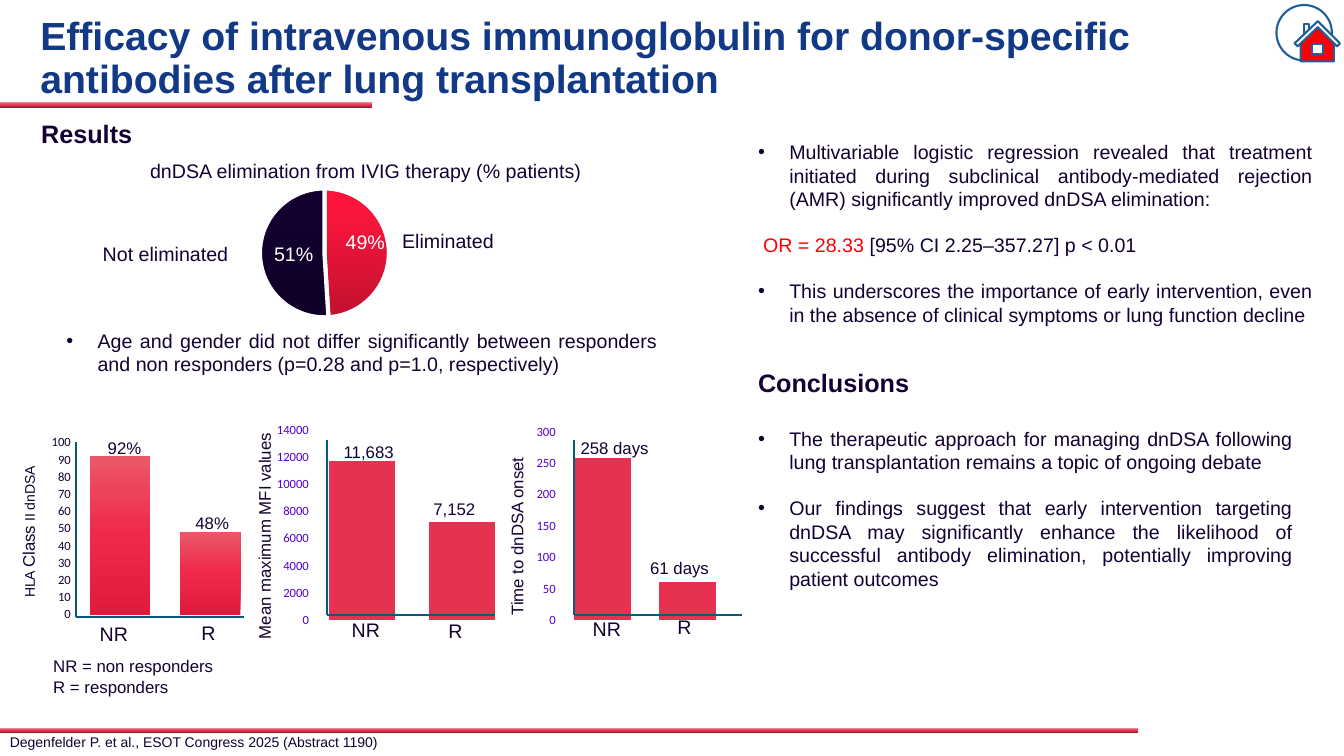
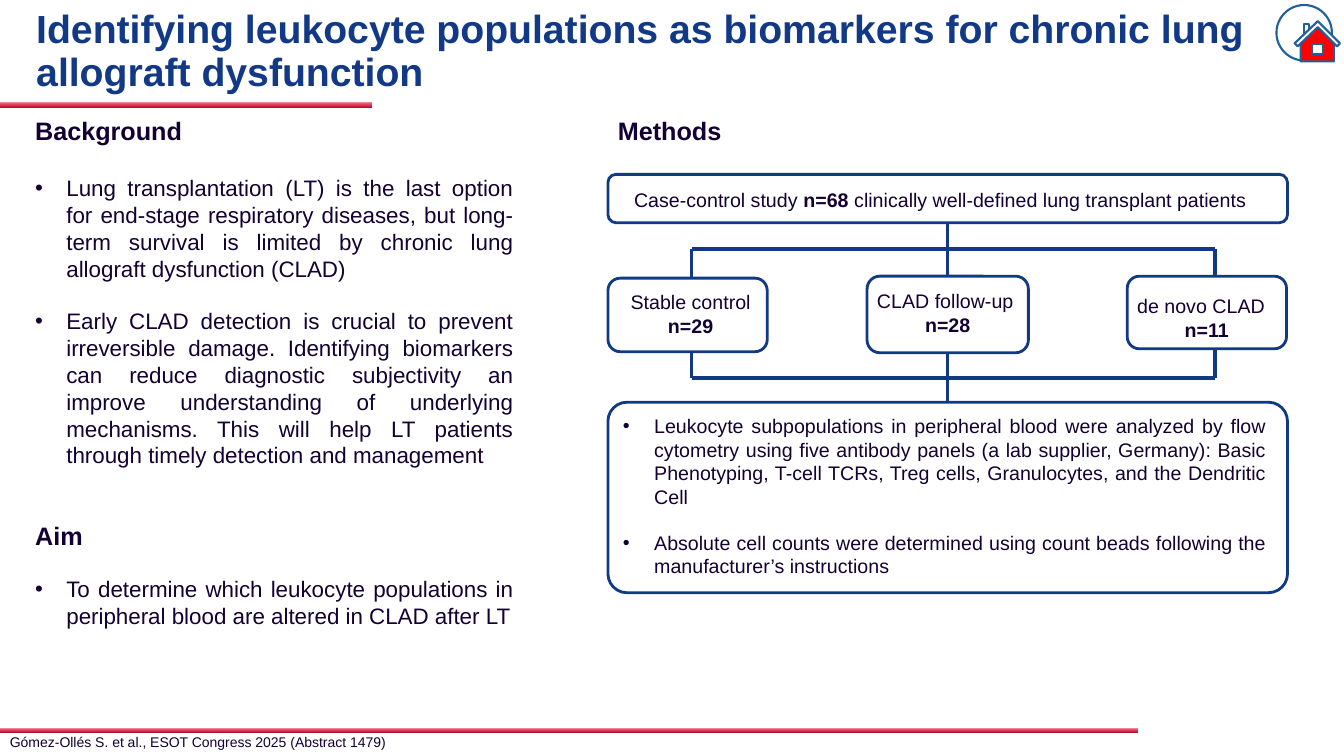
import pptx
import pptx.chart.data
import pptx.dml.color
import pptx.enum.chart
import pptx.enum.shapes
import pptx.enum.text
import pptx.oxml
import pptx.oxml.ns
import pptx.util
from lxml import etree

PX = 9144
INK, NAVY, FRAME, AXIS, ICON = "140032", "123986", "113986", "09597D", "215F9A"
WHITE, RED, CRIMSON, VIOLET = "FFFFFF", "FF0000", "E63250", "5400D3"
BAND = [(0, "A7142D"), (48, "E73855"), (100, "F08496")]
COLUMN = [(0, "DF1A3B"), (50, "EF294A"), (100, "EB5769")]
ELIMINATED = [(0, "C0112E"), (80, "F9163C"), (100, "FF1239")]
REMAINING = [(0, "0F0025"), (80, "130030"), (100, "130031")]
rgb = pptx.dml.color.RGBColor.from_string
qn = pptx.oxml.ns.qn
ALIGN = pptx.enum.text.PP_ALIGN
SHAPE = pptx.enum.shapes.MSO_SHAPE
CHART = pptx.enum.chart.XL_CHART_TYPE


def finish(target, fill=None, line=None, width=1.5):
    if isinstance(fill, list):
        target.fill.gradient()
        target.fill.gradient_angle = 90
        stops = target.fill._xPr.find(".//" + qn("a:gsLst"))
        for stop in list(stops):
            stops.remove(stop)
        for position, color in fill:
            stop = etree.SubElement(stops, qn("a:gs"), pos=str(position * 1000))
            etree.SubElement(stop, qn("a:srgbClr"), val=color)
    elif fill:
        target.fill.solid()
        target.fill.fore_color.rgb = rgb(fill)
    else:
        target.fill.background()
    if line:
        target.line.color.rgb = rgb(line)
        target.line.width = pptx.util.Pt(width)
    else:
        target.line.fill.background()
    if hasattr(target, "shadow"):
        target.shadow.inherit = False


def write(slide, box, paragraphs, size=14, color=INK, bold=False, align=ALIGN.LEFT, rotation=0):
    area = slide.shapes.add_textbox(*[length * PX for length in box])
    area.rotation = rotation
    frame = area.text_frame
    frame.word_wrap = True
    for index, content in enumerate(paragraphs):
        if isinstance(content, str):
            content = {"runs": [(content, {})]}
        paragraph = frame.paragraphs[0] if index == 0 else frame.add_paragraph()
        paragraph.alignment = content.get("align", align)
        properties = paragraph._p.get_or_add_pPr()
        if content.get("bullet"):
            properties.set("marL", str(31 * PX))
            properties.set("indent", str(-31 * PX))
            etree.SubElement(properties, qn("a:buFont"), typeface="Arial")
            etree.SubElement(properties, qn("a:buChar"), char="•")
            paragraph.alignment = ALIGN.JUSTIFY
        elif "left" in content:
            properties.set("marL", str(content["left"] * PX))
        if "before" in content:
            paragraph.space_before = pptx.util.Pt(content["before"])
        for wording, style in content["runs"]:
            run = paragraph.add_run()
            run.text = wording
            run.font.name = "Arial"
            run.font.size = pptx.util.Pt(style.get("size", size))
            run.font.bold = style.get("bold", bold)
            run.font.color.rgb = rgb(style.get("color", color))
    return area


deck = pptx.Presentation()
deck.slide_width = 1333 * PX
deck.slide_height = 750 * PX
pages = []
for title, title_box, citation in [
    ("Efficacy of intravenous immunoglobulin for donor-specific antibodies after lung transplantation",
     (40, 37, 1213, 44), "Degenfelder P. et al., ESOT Congress 2025 (Abstract 1190)"),
    ("Identifying leukocyte populations as biomarkers for chronic lung allograft dysfunction",
     (36, 30, 1200, 44), "Gómez-Ollés S. et al., ESOT Congress 2025 (Abstract 1479)"),
]:
    page = deck.slides.add_slide(deck.slide_layouts[6])
    pages.append(page)
    heading = write(page, title_box, [title], size=28, color=NAVY, bold=True).text_frame
    heading.margin_left = heading.margin_right = heading.margin_top = heading.margin_bottom = 0
    heading.vertical_anchor = pptx.enum.text.MSO_ANCHOR.MIDDLE
    heading.paragraphs[0].line_spacing = 0.9
    for band in [(0, 101, 369, 6), (0, 722, 1129, 5)]:
        finish(page.shapes.add_shape(SHAPE.RECTANGLE, *[length * PX for length in band]), BAND)
    write(page, (0, 723, 667, 27), [citation], size=10)
    house = [(1307, 25), (1323, 39), (1323, 61), (1290, 61), (1290, 39)]
    roof = [(1307, 21), (1329, 43), (1326, 46), (1307, 27), (1287, 46), (1284, 43)]
    for part, fill in [
        ((1266, 5, 55, 55), None), ((1293, 24, 5, 14), WHITE), (house, RED),
        ((1301, 44, 11, 10), WHITE), (roof, WHITE),
    ]:
        if isinstance(part, list):
            outline = page.shapes.build_freeform(*part[0], scale=PX)
            outline.add_line_segments(part[1:], close=True)
            piece = outline.convert_to_shape()
        else:
            preset = SHAPE.RECTANGLE if fill else SHAPE.OVAL
            piece = page.shapes.add_shape(preset, *[length * PX for length in part])
        finish(piece, fill, ICON)
results, methods = pages

write(results, (31, 112, 561, 40), ["Results"], size=18, bold=True)
write(results, (742, 359, 550, 236), [
    {"runs": [("Conclusions", {"size": 18, "bold": True})]},
    {"bullet": True, "before": 21, "runs": [("The therapeutic approach for managing dnDSA following lung transplantation remains a topic of ongoing debate", {})]},
    {"bullet": True, "before": 16, "runs": [("Our findings suggest that early intervention targeting dnDSA may significantly enhance the likelihood of successful antibody elimination, potentially improving patient outcomes", {})]},
])
write(results, (742, 134, 570, 199), [
    {"bullet": True, "runs": [("Multivariable logistic regression revealed that treatment initiated during subclinical antibody-mediated rejection (AMR) significantly improved dnDSA elimination:", {})]},
    {"before": 16, "left": 5, "runs": [("OR = 28.33", {"color": RED}), (" [95% CI 2.25–357.27] p < 0.01", {})]},
    {"bullet": True, "before": 16, "runs": [("This underscores the importance of early intervention, even in the absence of clinical symptoms or lung function decline", {})]},
])
write(results, (56, 321, 606, 57), [
    {"bullet": True, "runs": [("Age and gender did not differ significantly between responders and non responders (p=0.28 and p=1.0, respectively)", {})]},
])

for kind, box, plot, values, fills, top, step, tick_color in [
    (CHART.PIE, (191, 171, 267, 160), (0.24, 0.1, 0.5, 0.8), (49, 51), [ELIMINATED, REMAINING], 0, 0, INK),
    (CHART.COLUMN_STACKED, (40, 399, 427, 237), (0.08, 0.17, 0.42, 0.72), (92, 48), [COLUMN], 100, 10, INK),
    (CHART.COLUMN_CLUSTERED, (269, 414, 243, 212), (0.17, 0.06, 0.81, 0.89), (11700, 7200), [CRIMSON], 14000, 2000, VIOLET),
    (CHART.COLUMN_CLUSTERED, (527, 416, 201, 210), (0.14, 0.06, 0.84, 0.89), (258, 61), [CRIMSON], 300, 50, VIOLET),
]:
    figures = pptx.chart.data.CategoryChartData()
    figures.categories = ["1", "2"]
    figures.add_series("Series 1", values)
    chart = results.shapes.add_chart(kind, *[length * PX for length in box], figures).chart
    chart.has_legend = False
    chart.has_title = False
    chart.font.name = "Calibri"
    chart.font.size = pptx.util.Pt(10)
    chart.font.color.rgb = rgb(INK)
    area = chart._chartSpace.find(".//" + qn("c:plotArea"))
    for former in area.findall(qn("c:layout")):
        area.remove(former)
    layout = etree.Element(qn("c:layout"))
    manual = etree.SubElement(layout, qn("c:manualLayout"))
    settings = [("layoutTarget", "inner"), ("xMode", "edge"), ("yMode", "edge")]
    for tag, value in settings + list(zip("xywh", plot)):
        etree.SubElement(manual, qn("c:" + tag), val=str(value))
    area.insert(0, layout)
    series = chart.plots[0].series[0]
    if kind == CHART.PIE:
        for index, fill in enumerate(fills):
            finish(series.points[index].format, fill, WHITE, 3)
        continue
    chart.plots[0].vary_by_categories = False
    chart.plots[0].gap_width = 50
    finish(series.format, fills[0])
    chart.category_axis.visible = False
    chart.category_axis.has_major_gridlines = False
    scale = chart.value_axis
    scale.has_major_gridlines = False
    scale.minimum_scale, scale.maximum_scale, scale.major_unit = 0, top, step
    scale.major_tick_mark = pptx.enum.chart.XL_TICK_MARK.NONE
    scale.format.line.fill.background()
    scale.tick_labels.font.name = "Calibri"
    scale.tick_labels.font.size = pptx.util.Pt(9)
    scale.tick_labels.font.color.rgb = rgb(tick_color)

for label, x, y, width, size, color in [
    ("49%", 333, 223, 71, 14, WHITE), ("51%", 262, 235, 71, 14, WHITE),
    ("dnDSA elimination from IVIG therapy (% patients)", 139, 153, 500, 14, INK),
    ("Eliminated", 389, 222, 120, 14, INK), ("Not eliminated", 92, 235, 155, 14, INK),
    ("92%", 97, 429, 90, 12, INK), ("48%", 184, 504, 90, 12, INK),
    ("11,683", 331, 433, 105, 12, INK), ("7,152", 420, 490, 90, 12, INK),
    ("258 days", 566, 429, 100, 12, INK), ("61 days", 635, 548, 90, 12, INK),
    ("NR", 89, 612, 71, 14, INK), ("R", 190, 611, 44, 14, INK),
    ("NR", 339, 608, 71, 14, INK), ("R", 435, 609, 44, 14, INK),
    ("NR", 578, 607, 71, 14, INK), ("R", 662, 605, 44, 14, INK),
]:
    write(results, (x, y, width, 34 if size == 14 else 30), [label], size=size, color=color)
write(results, (43, 646, 300, 50), ["NR = non responders", "R = responders"], size=12)
for box, runs in [
    ((-71, 489, 198, 30), [("HLA ", {"size": 10}), ("Class", {}), (" II dnDSA", {"size": 10})]),
    ((99, 466, 326, 30), [("Mean maximum MFI values", {})]),
    ((401, 494, 223, 30), [("Time to dnDSA onset", {})]),
]:
    write(results, box, [{"runs": runs}], size=12, rotation=270)

write(methods, (25, 109, 494, 532), [
    {"runs": [("Background", {"size": 18, "bold": True})]},
    {"bullet": True, "before": 21, "runs": [("Lung transplantation (LT) is the last option for end-stage respiratory diseases, but long-term survival is limited by chronic lung allograft dysfunction (CLAD)", {})]},
    {"bullet": True, "before": 18, "runs": [("Early CLAD detection is crucial to prevent irreversible damage. Identifying biomarkers can reduce diagnostic subjectivity an improve understanding of underlying mechanisms. This will help LT patients through timely detection and management", {})]},
    {"before": 37, "runs": [("Aim", {"size": 18, "bold": True})]},
    {"bullet": True, "before": 18, "runs": [("To determine which leukocyte populations in peripheral blood are altered in CLAD after LT", {})]},
], size=16)
write(methods, (603, 109, 667, 40), ["Methods"], size=18, bold=True)

steps = []
for box in [(603, 173, 674, 48), (603, 276, 158, 73), (860, 274, 160, 76), (1118, 274, 158, 72), (603, 399, 674, 189)]:
    step = methods.shapes.add_shape(SHAPE.ROUNDED_RECTANGLE, *[length * PX for length in box])
    finish(step, None, FRAME, 2)
    steps.append(step)
cohort, stable, follow_up, de_novo, analysis = steps
analysis.adjustments[0] = 0.1
write(methods, (619, 182, 667, 34), [
    {"runs": [("Case-control study ", {}), ("n=68 ", {"bold": True}), ("clinically well-defined lung transplant patients", {})]},
])
for group, count, box, align in [
    ("Stable control", "n=29", (609, 283, 152, 57), ALIGN.CENTER),
    ("CLAD follow-up", "n=28", (860, 282, 160, 57), ALIGN.LEFT),
    ("de novo CLAD", "n=11", (1118, 287, 158, 57), ALIGN.LEFT),
]:
    write(methods, box, [
        {"align": align, "runs": [(group, {})]},
        {"align": ALIGN.CENTER, "runs": [(count, {"bold": True})]},
    ])
write(methods, (608, 406, 658, 205), [
    {"bullet": True, "runs": [("Leukocyte subpopulations in peripheral blood were analyzed by flow cytometry using five antibody panels (a lab supplier, Germany): Basic Phenotyping, T-cell TCRs, Treg cells, Granulocytes, and the Dendritic Cell", {})]},
    {"bullet": True, "before": 16, "runs": [("Absolute cell counts were determined using count beads following the manufacturer’s instructions", {})]},
])

links = []
for x, y, top in [(75, 612, 439), (324, 610, 437), (569, 610, 437)]:
    links.append((results, (x, top, x, y), None, None))
    links.append((results, (x, y, x + 167, y), None, None))
for y in (247, 375):
    links.append((methods, (686, y, 1205, y), None, None))
for x, box_top, box_bottom in [(686, 276, 349), (1205, 274, 346)]:
    links.append((methods, (x, 247, x, box_top), None, None))
    links.append((methods, (x, box_bottom, x, 375), None, None))
links += [
    (methods, (940, 221, 940, 247), cohort, None),
    (methods, (940, 247, 940, 274), None, follow_up),
    (methods, (940, 350, 940, 375), follow_up, None),
    (methods, (940, 375, 940, 399), None, analysis),
]
for page, ends, source, target in links:
    link = page.shapes.add_connector(pptx.enum.shapes.MSO_CONNECTOR.STRAIGHT, *[length * PX for length in ends])
    if source:
        link.begin_connect(source, 2)
    if target:
        link.end_connect(target, 0)
    link.line.color.rgb = rgb(AXIS if page is results else FRAME)
    link.line.width = pptx.util.Pt(1.5 if page is results else 2.25)
    etree.SubElement(link._element.spPr, qn("a:effectLst"))

deck.save("out.pptx")
